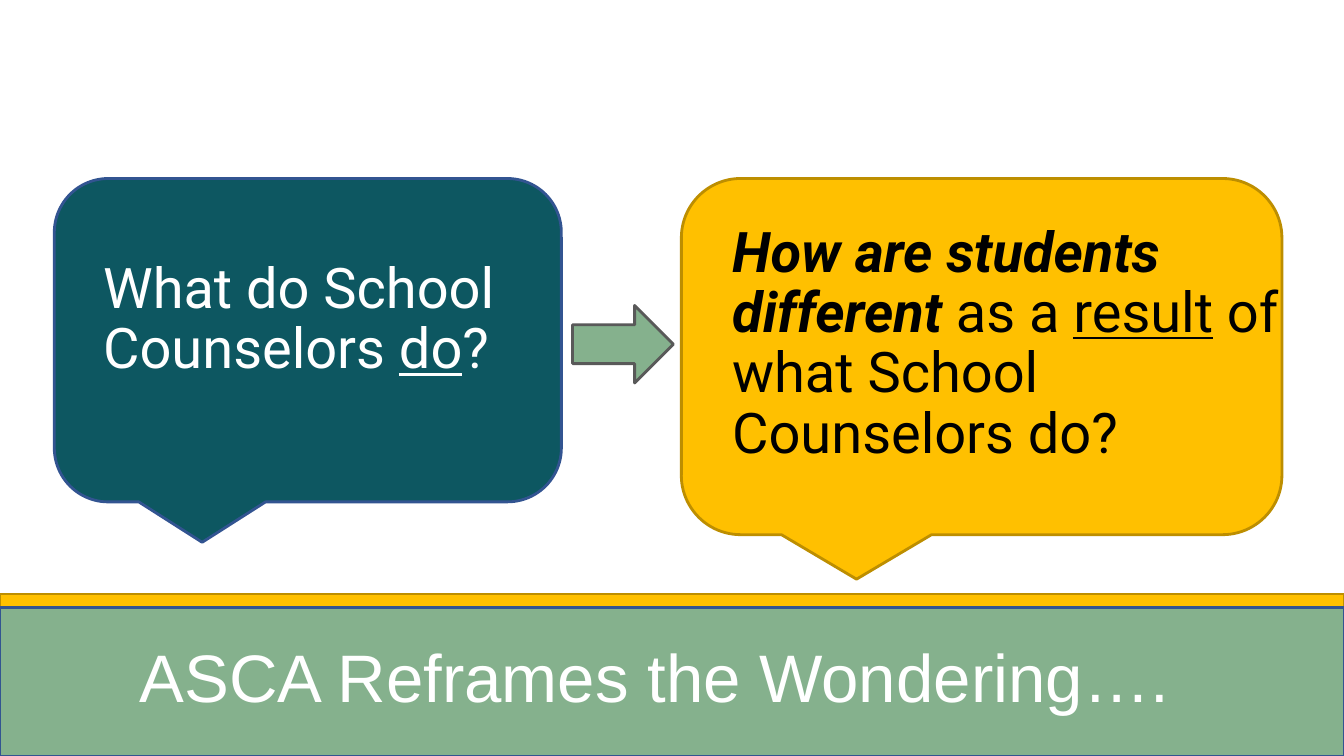
from dataclasses import dataclass

from lxml.etree import SubElement
from pptx import Presentation
from pptx.dml.color import RGBColor
from pptx.enum.shapes import MSO_SHAPE
from pptx.enum.text import MSO_ANCHOR, PP_ALIGN
from pptx.util import Pt


@dataclass(frozen=True)
class Theme:
    white: str = "FFFFFF"
    black: str = "000000"
    teal: str = "0D5761"
    gold: str = "FFC000"
    sage: str = "85B18D"
    navy_edge: str = "325491"
    gold_edge: str = "BD8E00"
    grey_edge: str = "595959"
    title_font: str = "Arial"
    question_font: str = "Roboto"
    title_size: int = 48
    question_size: int = 40
    edge_width: int = 2
    line_spacing: float = 0.9


class SlideBuilder:
    def __init__(self, slide, theme):
        self.slide = slide
        self.theme = theme

    def add_panel(self, preset, bounds, fill, edge):
        panel = self.slide.shapes.add_shape(preset, *map(Pt, bounds))
        panel.shadow.inherit = False
        panel.fill.solid()
        panel.fill.fore_color.rgb = RGBColor.from_string(fill)
        panel.line.color.rgb = RGBColor.from_string(edge)
        panel.line.width = Pt(self.theme.edge_width)

    def add_text(self, bounds, runs, font, size, color, anchor=MSO_ANCHOR.TOP, indent=0):
        """Add one paragraph; runs are (text, dict of font values) pairs."""
        frame = self.slide.shapes.add_textbox(*map(Pt, bounds)).text_frame
        frame_format = {
            "word_wrap": True,
            "vertical_anchor": anchor,
            "margin_left": Pt(7.2),
            "margin_right": Pt(7.2),
            "margin_top": Pt(3.6),
            "margin_bottom": Pt(3.6),
        }
        for name, value in frame_format.items():
            setattr(frame, name, value)
        paragraph = frame.paragraphs[0]
        paragraph.alignment = PP_ALIGN.LEFT
        paragraph.line_spacing = self.theme.line_spacing
        properties = paragraph._p.get_or_add_pPr()
        properties.set("marL", str(Pt(indent)))
        properties.set("indent", "0")
        namespace = properties.nsmap["a"]
        SubElement(properties, f"{{{namespace}}}buNone")
        for text, emphasis in runs:
            run = paragraph.add_run()
            run.text = text
            run.font.color.rgb = RGBColor.from_string(color)
            for name, value in {"name": font, "size": Pt(size), **emphasis}.items():
                setattr(run.font, name, value)

    def add_question(self, bounds, runs, color):
        self.add_text(bounds, runs, self.theme.question_font,
                      self.theme.question_size, color, indent=9)

    def add_title(self, bounds, text):
        self.add_text(bounds, [(text, {})], self.theme.title_font,
                      self.theme.title_size, self.theme.white, MSO_ANCHOR.MIDDLE)


def main():
    slide_width, slide_height = 960, 540
    callout_top = 127.5
    stripe_top, footer_top = 424.3, 434
    theme = Theme()
    underlined = {"underline": True}

    presentation = Presentation()
    presentation.slide_width = Pt(slide_width)
    presentation.slide_height = Pt(slide_height)
    slide = presentation.slides.add_slide(presentation.slide_layouts[6])
    builder = SlideBuilder(slide, theme)

    callout = MSO_SHAPE.ROUNDED_RECTANGULAR_CALLOUT
    builder.add_panel(callout, (486.7, callout_top, 429, 254.4), theme.gold, theme.gold_edge)
    builder.add_question(
        (506.9, 156.2, 416.2, 214.6),
        [
            ("How are students different ", {"bold": True, "italic": True}),
            ("as a ", {}),
            ("result", underlined),
            (" of what School Counselors do?", {}),
        ],
        theme.black,
    )

    builder.add_panel(callout, (38.8, callout_top, 362.2, 231), theme.teal, theme.navy_edge)
    builder.add_question(
        (57.6, 182.2, 332.6, 122.4),
        [("What do School Counselors ", {}), ("do", underlined), ("?", {})],
        theme.white,
    )

    builder.add_panel(MSO_SHAPE.RIGHT_ARROW, (409, 218.2, 72, 55.4),
                      theme.sage, theme.grey_edge)

    builder.add_panel(MSO_SHAPE.RECTANGLE, (0, stripe_top, slide_width, 13.7),
                      theme.gold, theme.gold_edge)
    builder.add_panel(MSO_SHAPE.RECTANGLE,
                      (0, footer_top, slide_width, slide_height - footer_top),
                      theme.sage, theme.navy_edge)
    builder.add_title((92.9, footer_top, 761.8, 104.4), "ASCA Reframes the Wondering….")

    presentation.save("out.pptx")


if __name__ == "__main__":
    main()
